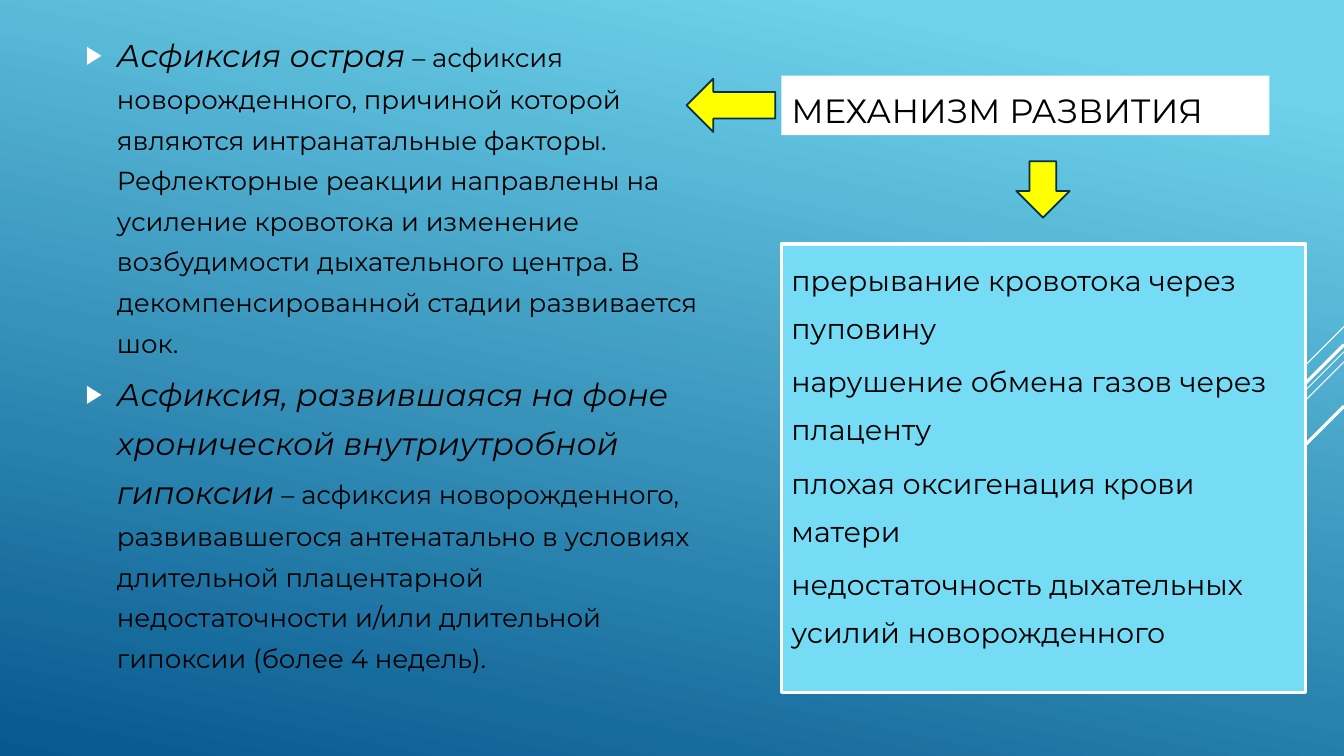
from lxml.etree import SubElement
from pptx import Presentation
from pptx.dml.color import RGBColor
from pptx.enum.shapes import MSO_CONNECTOR, MSO_SHAPE
from pptx.enum.text import MSO_ANCHOR, MSO_AUTO_SIZE, PP_ALIGN
from pptx.oxml.ns import qn
from pptx.util import Inches, Pt

BLACK = RGBColor(0x00, 0x00, 0x00)
WHITE = RGBColor(0xFF, 0xFF, 0xFF)
SKY = RGBColor(0x6E, 0xD2, 0xEB)
DEEP_BLUE = RGBColor(0x06, 0x58, 0x8E)
PALE_BLUE = RGBColor(0x76, 0xDB, 0xF4)
YELLOW = RGBColor(0xFF, 0xFF, 0x00)
NAVY = RGBColor(0x04, 0x31, 0x48)
FONT = "Montserrat"
SLIDE_WIDTH, SLIDE_HEIGHT = 13.33, 7.5

HEADING = "МЕХАНИЗМ РАЗВИТИЯ"
DEFINITIONS = [
    ("Асфиксия острая",
     " – асфиксия новорожденного, причиной которой являются интранатальные факторы. "
     "Рефлекторные реакции направлены на усиление кровотока и изменение возбудимости "
     "дыхательного центра. В декомпенсированной стадии развивается шок."),
    ("Асфиксия, развившаяся на фоне хронической внутриутробной гипоксии",
     " – асфиксия новорожденного, развивавшегося антенатально в условиях длительной "
     "плацентарной недостаточности и/или длительной гипоксии (более 4 недель)."),
]
CAUSES = [
    "прерывание кровотока через пуповину",
    "нарушение обмена газов через плаценту",
    "плохая оксигенация крови матери",
    "недостаточность дыхательных усилий новорожденного",
]
DIAGONALS = [(3.24, 1, 0.75), (3.49, 3.26, 0.75), (3.59, 2.07, 0.75),
             (3.42, 1.91, 2.25), (4.03, 1.39, 2.25)]


def paint_background(slide):
    """Fill the slide with a slanted gradient from light to deep blue."""
    fill = slide.background.fill
    fill.gradient()
    fill.gradient_angle = 258
    for stop, color, position in zip(fill.gradient_stops, (SKY, DEEP_BLUE), (0.1, 1)):
        stop.color.rgb = color
        stop.position = position


def draw_diagonals(slide):
    """Draw the 45-degree lines at the right edge, behind everything else."""
    for layer, (top, reach, weight) in enumerate(DIAGONALS):
        diagonal = slide.shapes.add_connector(
            MSO_CONNECTOR.STRAIGHT, Inches(SLIDE_WIDTH), Inches(top),
            Inches(SLIDE_WIDTH - reach), Inches(top + reach))
        diagonal.line.color.rgb = WHITE
        diagonal.line.width = Pt(weight)
        SubElement(diagonal.element.spPr, qn("a:effectLst"))
        slide.shapes.element.insert(2 + layer, diagonal.element)


def place(holder, box, anchor):
    """Move a placeholder to its box and return its text frame."""
    holder.left, holder.top, holder.width, holder.height = map(Inches, box)
    frame = holder.text_frame
    frame.word_wrap = True
    frame.auto_size = MSO_AUTO_SIZE.NONE
    frame.vertical_anchor = anchor
    return frame


def add_text(paragraph, words, size, italic=False):
    """Add one formatted run to a paragraph."""
    run = paragraph.add_run()
    run.text = words
    run.font.name = FONT
    run.font.size = Pt(size)
    run.font.italic = italic
    run.font.color.rgb = BLACK


def add_paragraph(frame, index, spacing):
    """Return the paragraph at an index with left alignment and spacing."""
    paragraph = frame.add_paragraph() if index else frame.paragraphs[0]
    paragraph.alignment = PP_ALIGN.LEFT
    paragraph.line_spacing = spacing
    paragraph.space_before = Pt(4)
    return paragraph


def set_bullet(paragraph, symbol=None):
    """Give a paragraph a white hanging bullet, or none."""
    properties = paragraph._p.get_or_add_pPr()
    indent = Inches(0.31) if symbol else 0
    properties.set("marL", str(indent))
    properties.set("indent", str(-indent))
    if not symbol:
        SubElement(properties, qn("a:buNone"))
        return
    color = SubElement(properties, qn("a:buClr"))
    SubElement(color, qn("a:srgbClr"), val=str(WHITE))
    SubElement(properties, qn("a:buSzPct"), val="80000")
    SubElement(properties, qn("a:buFont"), typeface="Arial")
    SubElement(properties, qn("a:buChar"), char=symbol)


def fill_heading(holder, box):
    """Write the heading on its white band."""
    frame = place(holder, box, MSO_ANCHOR.BOTTOM)
    holder.fill.solid()
    holder.fill.fore_color.rgb = WHITE
    heading = frame.paragraphs[0]
    heading.alignment = PP_ALIGN.LEFT
    add_text(heading, HEADING, 24)


def fill_definitions(holder, box):
    """List each term in italics with its definition."""
    frame = place(holder, box, MSO_ANCHOR.MIDDLE)
    frame.margin_bottom = Inches(0.74)
    for index, (term, meaning) in enumerate(DEFINITIONS):
        definition = add_paragraph(frame, index, 1.3)
        set_bullet(definition, "▶")
        add_text(definition, term, 22.5, italic=True)
        add_text(definition, meaning, 18.6)


def fill_causes(holder, box):
    """List the causes in the framed panel."""
    frame = place(holder, box, MSO_ANCHOR.TOP)
    holder.fill.solid()
    holder.fill.fore_color.rgb = PALE_BLUE
    holder.line.color.rgb = WHITE
    holder.line.width = Pt(2.25)
    for index, words in enumerate(CAUSES):
        cause = add_paragraph(frame, index, 1.4)
        set_bullet(cause)
        add_text(cause, words, 20.4)


def draw_arrow(slide, direction, box):
    """Draw a yellow block arrow in its box."""
    arrow = slide.shapes.add_shape(direction, *map(Inches, box))
    arrow.shadow.inherit = False
    arrow.fill.solid()
    arrow.fill.fore_color.rgb = YELLOW
    arrow.line.color.rgb = NAVY
    arrow.line.width = Pt(1.25)


def main():
    """Build the slide and save it."""
    deck = Presentation()
    deck.slide_width = Inches(SLIDE_WIDTH)
    deck.slide_height = Inches(SLIDE_HEIGHT)
    slide = deck.slides.add_slide(deck.slide_layouts[3])
    heading, definitions, causes = slide.placeholders
    paint_background(slide)
    draw_diagonals(slide)
    fill_heading(heading, (7.75, 0.75, 4.84, 0.59))
    fill_definitions(definitions, (0.75, 0.45, 6.5, 6.72))
    fill_causes(causes, (7.75, 2.42, 5.2, 4.45))
    draw_arrow(slide, MSO_SHAPE.LEFT_ARROW, (6.81, 0.78, 0.88, 0.53))
    draw_arrow(slide, MSO_SHAPE.DOWN_ARROW, (10.08, 1.6, 0.53, 0.56))
    deck.save("out.pptx")


if __name__ == "__main__":
    main()
